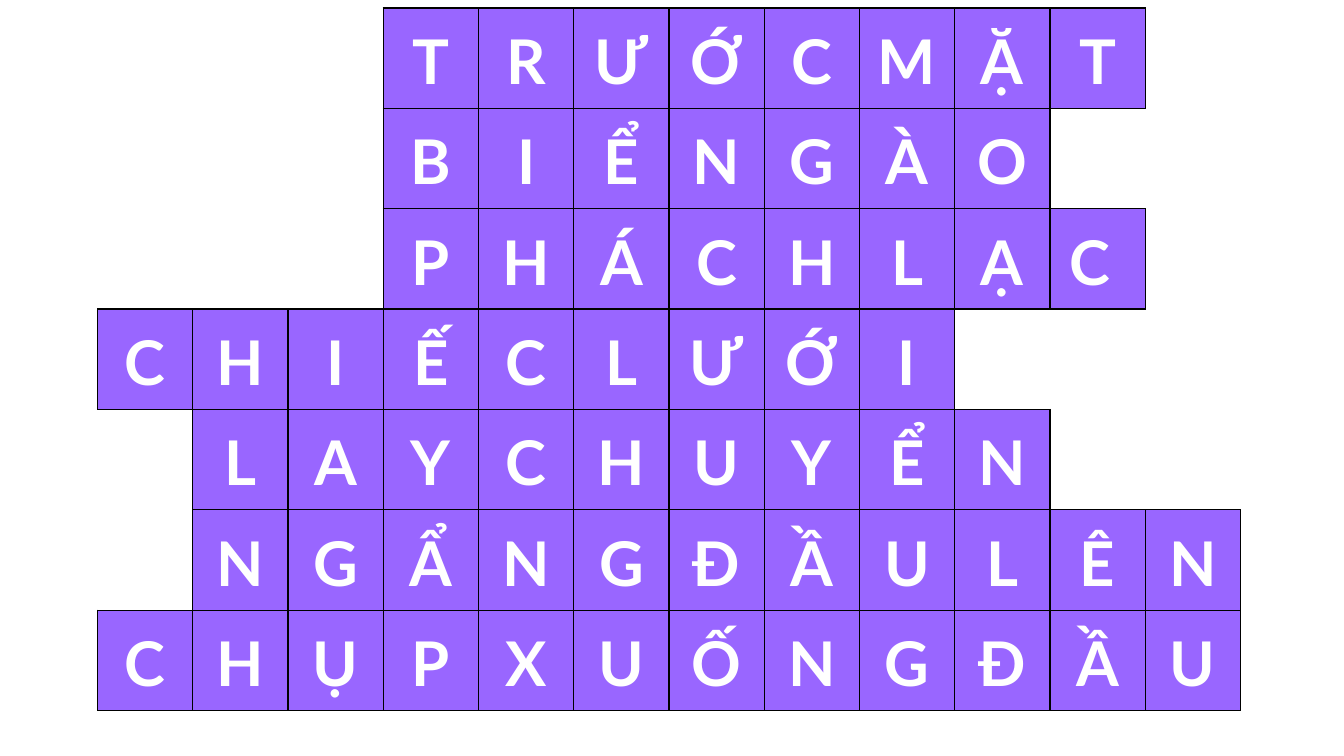
"""Builds a slide with a solved Vietnamese crossword laid out as a table."""
from lxml.etree import SubElement
from pptx import Presentation
from pptx.dml.color import RGBColor
from pptx.enum.text import MSO_ANCHOR, PP_ALIGN
from pptx.oxml.ns import qn
from pptx.util import Cm, Pt

PURPLE = RGBColor(0x99, 0x66, 0xFF)
WHITE = RGBColor(0xFF, 0xFF, 0xFF)
BLACK = RGBColor(0x00, 0x00, 0x00)

COLUMNS = 12
ANSWERS = [
    (3, "TRƯỚCMẶT"),
    (3, "BIỂNGÀO"),
    (3, "PHÁCHLẠC"),
    (0, "CHIẾCLƯỚI"),
    (1, "LAYCHUYỂN"),
    (1, "NGẨNGĐẦULÊN"),
    (0, "CHỤPXUỐNGĐẦU"),
]
SIDES = {"a:lnL": (0, -1), "a:lnR": (0, 1), "a:lnT": (-1, 0), "a:lnB": (1, 0)}


class CrosswordSlide:
    """Holds the crossword style and the slide it is drawn on."""

    font_name = "Lato"
    font_size = Pt(44)
    border_width = Pt(1)
    cell_width = Cm(2.4)
    cell_height = Cm(2.53)

    def __init__(self, slide):
        self.slide = slide

    def add_crossword(self, left, top, letters, row_count, column_count):
        """Add the grid, with each letter at its (row, column) position."""
        frame = self.slide.shapes.add_table(
            row_count, column_count, left, top,
            self.cell_width * column_count, self.cell_height * row_count)
        crossword = frame.table
        crossword.first_row = crossword.horz_banding = False
        for column in crossword.columns:
            column.width = self.cell_width
        for row in crossword.rows:
            row.height = self.cell_height
        for row in range(row_count):
            for column in range(column_count):
                square = crossword.cell(row, column)
                filled = (row, column) in letters
                for side, (down, across) in SIDES.items():
                    touches = (row + down, column + across) in letters
                    self.add_border(square, side, filled or touches)
                square.fill.solid()
                square.fill.fore_color.rgb = PURPLE if filled else WHITE
                if filled:
                    self.write_letter(square, letters[row, column])

    def add_border(self, square, side, visible):
        """Draw or hide one side of a square."""
        line = SubElement(square._tc.get_or_add_tcPr(), qn(side), w=str(self.border_width))
        if visible:
            solid = SubElement(line, qn("a:solidFill"))
            SubElement(solid, qn("a:srgbClr"), val=str(BLACK))
        else:
            SubElement(line, qn("a:noFill"))

    def write_letter(self, square, letter):
        """Write one centred letter in a square."""
        square.vertical_anchor = MSO_ANCHOR.MIDDLE
        square.margin_left = square.margin_right = Cm(0.19)
        square.margin_top = square.margin_bottom = 0
        paragraph = square.text_frame.paragraphs[0]
        paragraph.text = letter
        paragraph.alignment = PP_ALIGN.CENTER
        paragraph.line_spacing = 1.07
        paragraph.space_after = Pt(8)
        font = paragraph.runs[0].font
        font.name = self.font_name
        font.size = self.font_size
        font.bold = True
        font.color.rgb = WHITE


def main():
    """Build and save the presentation."""
    presentation = Presentation()
    presentation.slide_width = Cm(33.87)
    presentation.slide_height = Cm(19.05)
    slide = presentation.slides.add_slide(presentation.slide_layouts[6])

    letters = {
        (row, start + offset): letter
        for row, (start, answer) in enumerate(ANSWERS)
        for offset, letter in enumerate(answer)
    }
    letters[2, 10] = "C "
    CrosswordSlide(slide).add_crossword(
        Cm(2.46), Cm(0.2), letters, len(ANSWERS), COLUMNS)
    presentation.save("out.pptx")


if __name__ == "__main__":
    main()
